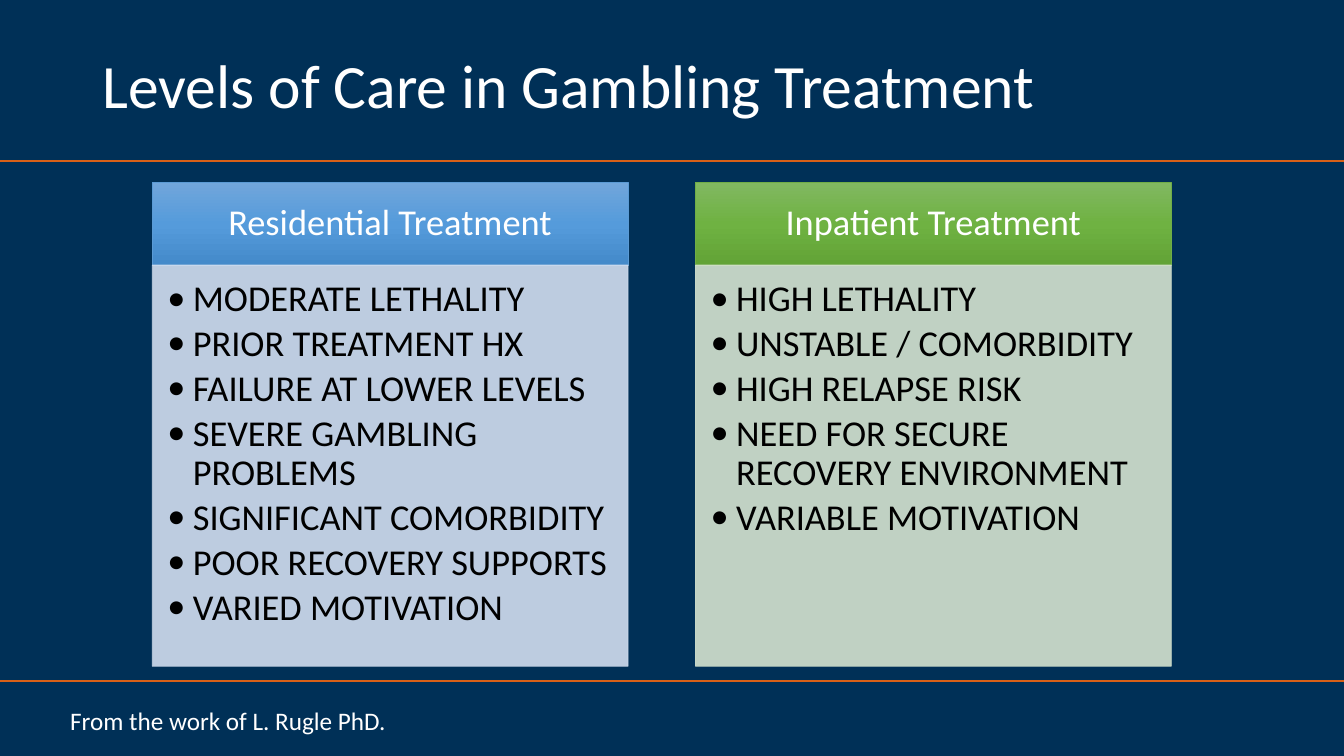
from copy import deepcopy
from dataclasses import dataclass

from lxml.etree import SubElement
from pptx import Presentation
from pptx.dml.color import RGBColor
from pptx.enum.shapes import MSO_CONNECTOR as Connector, MSO_SHAPE as Shape
from pptx.enum.text import MSO_ANCHOR as Anchor, MSO_AUTO_SIZE as AutoSize, PP_ALIGN as Align
from pptx.oxml.ns import qn
from pptx.util import Cm, Pt

NAVY = RGBColor(0x00, 0x30, 0x57)
ORANGE = RGBColor(0xD8, 0x60, 0x18)
WHITE = RGBColor(0xFF, 0xFF, 0xFF)
BLACK = RGBColor(0x00, 0x00, 0x00)
BLUE = RGBColor(0x5B, 0x9B, 0xD5)
BLUE_SHADES = (RGBColor(0x71, 0xA6, 0xDB), RGBColor(0x55, 0x9B, 0xDB), RGBColor(0x44, 0x8A, 0xCA))
PALE_BLUE = RGBColor(0xD2, 0xDE, 0xEF)
GREEN = RGBColor(0x70, 0xAD, 0x47)
GREEN_SHADES = (RGBColor(0x81, 0xB8, 0x61), RGBColor(0x6F, 0xB2, 0x42), RGBColor(0x62, 0xA3, 0x36))
PALE_GREEN = RGBColor(0xD5, 0xE3, 0xCF)

SLIDE_WIDTH, SLIDE_HEIGHT = Cm(33.87), Cm(19.05)
CARE_LEFT, CARE_PITCH, CARE_WIDTH = Cm(3.84), Cm(13.69), Cm(11.99)
HEADING_TOP, HEADING_HEIGHT, CRITERIA_HEIGHT = Cm(4.6), Cm(2.08), Cm(10.11)
HANGING_INDENT = Cm(0.64)


@dataclass(frozen=True)
class CareLevel:
    """A level of care with its admission criteria and colours."""
    heading: str
    criteria: tuple[str, ...]
    outline: RGBColor
    shades: tuple[RGBColor, ...]
    tint: RGBColor


CARE_LEVELS = (
    CareLevel(
        "Residential Treatment",
        ("MODERATE LETHALITY", "PRIOR TREATMENT HX", "FAILURE AT LOWER LEVELS",
         "SEVERE GAMBLING PROBLEMS", "SIGNIFICANT COMORBIDITY",
         "POOR RECOVERY SUPPORTS", "VARIED MOTIVATION"),
        BLUE, BLUE_SHADES, PALE_BLUE),
    CareLevel(
        "Inpatient Treatment",
        ("HIGH LETHALITY", "UNSTABLE / COMORBIDITY", "HIGH RELAPSE RISK",
         "NEED FOR SECURE RECOVERY ENVIRONMENT", "VARIABLE MOTIVATION"),
        GREEN, GREEN_SHADES, PALE_GREEN),
)


def format_runs(frame, size: float, color: RGBColor) -> None:
    """Give every run in the frame the deck font."""
    for paragraph in frame.paragraphs:
        for run in paragraph.runs:
            run.font.name = "Calibri"
            run.font.size = Pt(size)
            run.font.color.rgb = color


def set_margins(frame, left: float, top: float, right: float, bottom: float) -> None:
    """Set the four text insets in centimetres."""
    frame.margin_left, frame.margin_top = Cm(left), Cm(top)
    frame.margin_right, frame.margin_bottom = Cm(right), Cm(bottom)


def add_rule(slide, top: int) -> None:
    """Draw an orange rule across the slide."""
    rule = slide.shapes.add_connector(Connector.STRAIGHT, 0, top, SLIDE_WIDTH, top)
    rule.line.color.rgb = ORANGE
    rule.line.width = Pt(1.5)
    SubElement(rule._element.spPr, qn("a:effectLst"))


def add_panel(slide, left: int, top: int, height: int, outline: RGBColor):
    """Add an outlined rectangle of the column width."""
    panel = slide.shapes.add_shape(Shape.RECTANGLE, left, top, CARE_WIDTH, height)
    panel.shadow.inherit = False
    panel.line.color.rgb = outline
    panel.line.width = Pt(0.5)
    panel.text_frame.word_wrap = True
    return panel


def shade(panel, shades: tuple[RGBColor, ...]) -> None:
    """Fill the panel with evenly spaced shades from top to bottom."""
    panel.fill.gradient()
    panel.fill.gradient_angle = 270
    stop_list = panel._element.spPr.find(qn("a:gradFill")).find(qn("a:gsLst"))
    stop_list.insert(1, deepcopy(stop_list[0]))
    for index, (stop, color) in enumerate(zip(panel.fill.gradient_stops, shades)):
        stop.position = index / (len(shades) - 1)
        stop.color.rgb = color


def add_heading(slide, left: int, care: CareLevel) -> None:
    """Draw the shaded heading of a level of care."""
    heading = add_panel(slide, left, HEADING_TOP, HEADING_HEIGHT, care.outline)
    shade(heading, care.shades)
    frame = heading.text_frame
    frame.text = care.heading
    frame.vertical_anchor = Anchor.MIDDLE
    set_margins(frame, 0.51, 0.3, 0.51, 0.3)
    frame.paragraphs[0].alignment = Align.CENTER
    frame.paragraphs[0].line_spacing = 0.9
    format_runs(frame, 26, WHITE)


def add_criteria(slide, left: int, care: CareLevel) -> None:
    """Draw the translucent panel with bulleted criteria."""
    panel = add_panel(slide, left, HEADING_TOP + HEADING_HEIGHT, CRITERIA_HEIGHT, care.tint)
    panel.fill.solid()
    panel.fill.fore_color.rgb = care.tint
    for color in panel._element.spPr.iter(qn("a:srgbClr")):
        SubElement(color, qn("a:alpha"), val="90000")
    frame = panel.text_frame
    frame.text = "\n".join(care.criteria)
    frame.vertical_anchor = Anchor.TOP
    set_margins(frame, 0.38, 0.38, 0.51, 0.58)
    for paragraph in frame.paragraphs:
        properties = paragraph._p.get_or_add_pPr()
        properties.set("marL", str(HANGING_INDENT))
        properties.set("indent", str(-HANGING_INDENT))
        SubElement(properties, qn("a:buFont"), typeface="Calibri")
        SubElement(properties, qn("a:buChar"), char="•")
        paragraph.alignment = Align.LEFT
        paragraph.line_spacing = 0.9
        paragraph.space_after = Pt(4)
    format_runs(frame, 26, BLACK)


def add_title(slide) -> None:
    """Write the slide title."""
    frame = slide.shapes.add_textbox(Cm(2.33), Cm(0.38), Cm(29.21), Cm(3.68)).text_frame
    frame.word_wrap = True
    frame.vertical_anchor = Anchor.MIDDLE
    frame.text = "Levels of Care in Gambling Treatment"
    frame.paragraphs[0].line_spacing = 0.9
    format_runs(frame, 44, WHITE)


def add_credit(slide) -> None:
    """Write the source credit in the footer."""
    frame = slide.shapes.add_textbox(Cm(1.52), Cm(17.65), Cm(8.56), Cm(1.02)).text_frame
    frame.word_wrap = False
    frame.auto_size = AutoSize.SHAPE_TO_FIT_TEXT
    frame.text = "From the work of L. Rugle PhD."
    format_runs(frame, 18, WHITE)


def main() -> None:
    """Build and save the slide."""
    deck = Presentation()
    deck.slide_width, deck.slide_height = SLIDE_WIDTH, SLIDE_HEIGHT
    slide = deck.slides.add_slide(deck.slide_layouts[6])
    slide.background.fill.solid()
    slide.background.fill.fore_color.rgb = NAVY
    for top in (Cm(4.06), Cm(17.17)):
        add_rule(slide, top)
    add_title(slide)
    for index, care in enumerate(CARE_LEVELS):
        left = CARE_LEFT + index * CARE_PITCH
        add_heading(slide, left, care)
        add_criteria(slide, left, care)
    add_credit(slide)
    deck.save("out.pptx")


if __name__ == "__main__":
    main()
